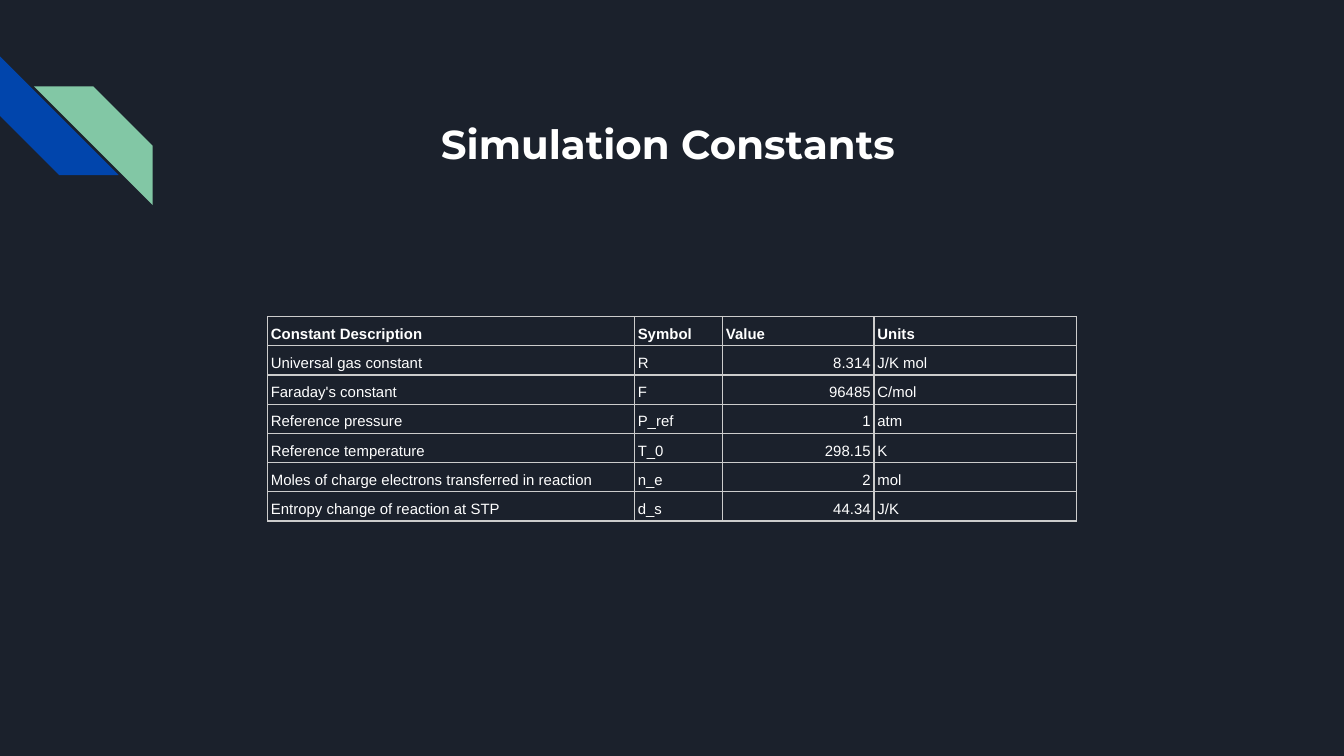
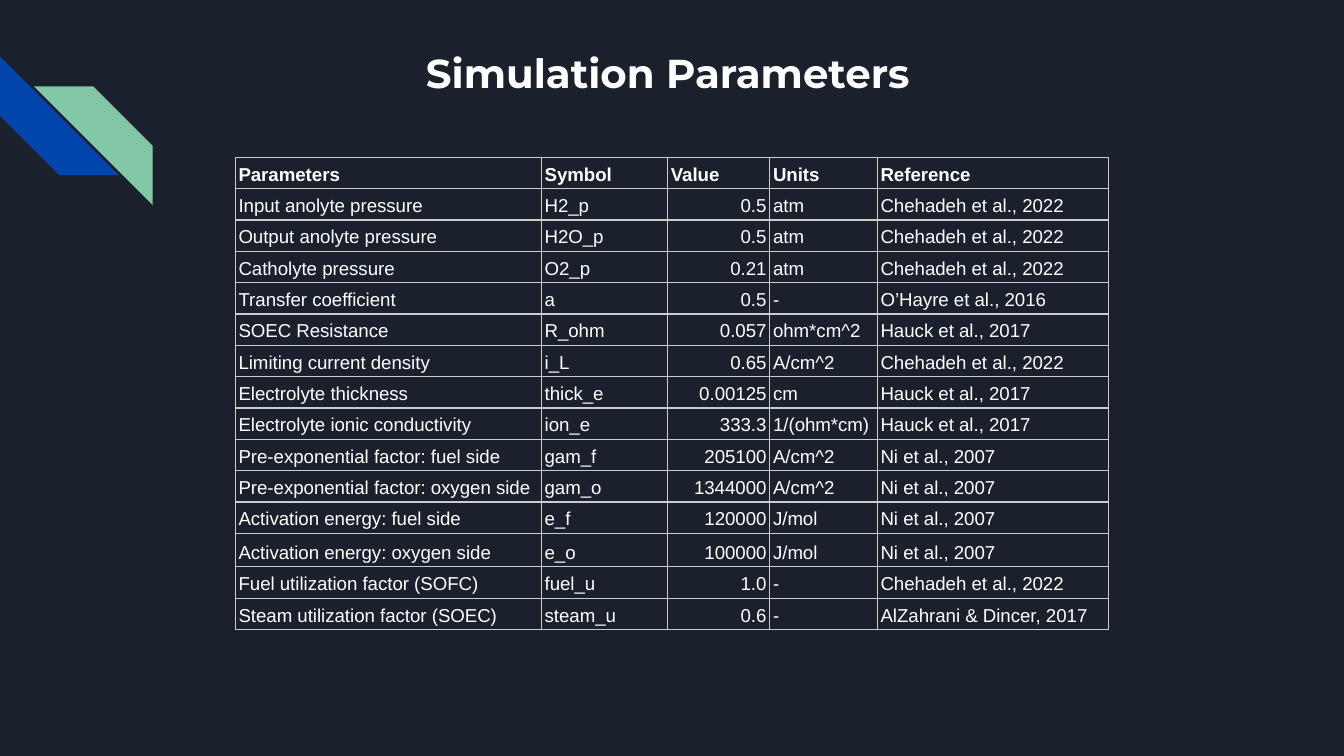
from lxml.etree import SubElement
from pptx import Presentation
from pptx.dml.color import RGBColor
from pptx.enum.shapes import MSO_SHAPE
from pptx.enum.text import MSO_ANCHOR, MSO_AUTO_SIZE, PP_ALIGN
from pptx.oxml.ns import qn
from pptx.util import Pt

NIGHT = RGBColor(0x1B, 0x21, 0x2C)
BLUE = RGBColor(0x01, 0x45, 0xAC)
GREEN = RGBColor(0x82, 0xC7, 0xA5)
WHITE = RGBColor(0xFF, 0xFF, 0xFF)
GRID = RGBColor(0xCC, 0xCC, 0xCC)

TITLE_ONLY = 5
STRIPE_SIZE = 63.6
TITLE_HEIGHT = 45.4
TITLE_INSET = 7.2
CELL_INSET = 1.8
VALUE_COLUMN = 2

CONSTANTS = [
    ("Constant Description", "Symbol", "Value", "Units"),
    ("Universal gas constant", "R", "8.314", "J/K mol"),
    ("Faraday's constant", "F", "96485", "C/mol"),
    ("Reference pressure", "P_ref", "1", "atm"),
    ("Reference temperature", "T_0", "298.15", "K"),
    ("Moles of charge electrons transferred in reaction", "n_e", "2", "mol"),
    ("Entropy change of reaction at STP", "d_s", "44.34", "J/K"),
]

PARAMETERS = [
    ("Parameters", "Symbol", "Value", "Units", "Reference"),
    ("Input anolyte pressure", "H2_p", "0.5", "atm", "Chehadeh et al., 2022"),
    ("Output anolyte pressure", "H2O_p", "0.5", "atm", "Chehadeh et al., 2022"),
    ("Catholyte pressure", "O2_p", "0.21", "atm", "Chehadeh et al., 2022"),
    ("Transfer coefficient", "a", "0.5", "-", "O’Hayre et al., 2016"),
    ("SOEC Resistance", "R_ohm", "0.057", "ohm*cm^2", "Hauck et al., 2017"),
    ("Limiting current density", "i_L", "0.65", "A/cm^2", "Chehadeh et al., 2022"),
    ("Electrolyte thickness", "thick_e", "0.00125", "cm", "Hauck et al., 2017"),
    ("Electrolyte ionic conductivity", "ion_e", "333.3", "1/(ohm*cm)", "Hauck et al., 2017"),
    ("Pre-exponential factor: fuel side", "gam_f", "205100", "A/cm^2", "Ni et al., 2007"),
    ("Pre-exponential factor: oxygen side", "gam_o", "1344000", "A/cm^2", "Ni et al., 2007"),
    ("Activation energy: fuel side", "e_f", "120000", "J/mol", "Ni et al., 2007"),
    ("Activation energy: oxygen side", "e_o", "100000", "J/mol", "Ni et al., 2007"),
    ("Fuel utilization factor (SOFC)", "fuel_u", "1.0", "-", "Chehadeh et al., 2022"),
    ("Steam utilization factor (SOEC)", "steam_u", "0.6", "-", "AlZahrani & Dincer, 2017"),
]


def write_text(frame, text, *, size, font="Arial", bold=False, align=PP_ALIGN.LEFT, spacing=1.0):
    paragraph = frame.paragraphs[0]
    paragraph.alignment = align
    paragraph.line_spacing = spacing
    run = paragraph.add_run()
    run.text = text
    run.font.name = font
    run.font.size = Pt(size)
    run.font.bold = bold
    run.font.color.rgb = WHITE


def set_insets(target, inset):
    target.margin_left = target.margin_right = Pt(inset)
    target.margin_top = target.margin_bottom = Pt(inset)


def add_stripe(slide, left, top, color, rotation):
    stripe = slide.shapes.add_shape(
        MSO_SHAPE.DIAGONAL_STRIPE, Pt(left), Pt(top), Pt(STRIPE_SIZE), Pt(STRIPE_SIZE))
    stripe.adjustments[0] = 0.5
    stripe.rotation = rotation
    stripe.shadow.inherit = False
    stripe.fill.solid()
    stripe.fill.fore_color.rgb = color
    stripe.line.fill.background()


def add_titled_slide(deck, text, left, top, width):
    slide = deck.slides.add_slide(deck.slide_layouts[TITLE_ONLY])
    title = slide.shapes.title
    title.left, title.top = Pt(left), Pt(top)
    title.width, title.height = Pt(width), Pt(TITLE_HEIGHT)
    frame = title.text_frame
    frame.word_wrap = True
    frame.auto_size = MSO_AUTO_SIZE.NONE
    frame.vertical_anchor = MSO_ANCHOR.TOP
    set_insets(frame, TITLE_INSET)
    write_text(frame, text, size=21.6, font="Montserrat", bold=True)
    add_stripe(slide, 0, 30.2, BLUE, 270)
    add_stripe(slide, 18.2, 46.3, GREEN, 90)
    return slide


def draw_borders(cell):
    properties = cell._tc.get_or_add_tcPr()
    for position, side in enumerate(("lnL", "lnR", "lnT", "lnB")):
        border = SubElement(properties, qn(f"a:{side}"), w=str(Pt(0.75)))
        fill = SubElement(border, qn("a:solidFill"))
        SubElement(fill, qn("a:srgbClr"), val=str(GRID))
        properties.insert(position, border)


def add_data_table(slide, entries, left, top, widths, heights, size):
    frame = slide.shapes.add_table(
        len(entries), len(widths), Pt(left), Pt(top), Pt(sum(widths)), Pt(sum(heights)))
    table = frame.table
    table.first_row = table.horz_banding = False
    for column, width in zip(table.columns, widths):
        column.width = Pt(width)
    for row, height in zip(table.rows, heights):
        row.height = Pt(height)
    for row_index, entry in enumerate(entries):
        heading = row_index == 0
        for column_index, text in enumerate(entry):
            cell = table.cell(row_index, column_index)
            cell.fill.background()
            cell.vertical_anchor = MSO_ANCHOR.BOTTOM
            set_insets(cell, CELL_INSET)
            draw_borders(cell)
            numeric = column_index == VALUE_COLUMN and not heading
            write_text(cell.text_frame, text, size=size, bold=heading, spacing=1.15,
                       align=PP_ALIGN.RIGHT if numeric else PP_ALIGN.LEFT)


def main():
    deck = Presentation()
    deck.slide_width, deck.slide_height = Pt(720), Pt(405)
    backdrop = deck.slide_master.background.fill
    backdrop.solid()
    backdrop.fore_color.rgb = NIGHT

    constants = add_titled_slide(deck, "Simulation Constants", 229, 56.9, 262.8)
    add_data_table(constants, CONSTANTS, 143.3, 169.6, (196.6, 47.2, 81.2, 108.4),
                   [15.65] * len(CONSTANTS), 8)

    parameters = add_titled_slide(deck, "Simulation Parameters", 221, 18.7, 277.9)
    heights = [18 if entry[1] == "e_o" else 16.8 for entry in PARAMETERS]
    add_data_table(parameters, PARAMETERS, 126, 84.3, (164, 67.6, 54.8, 57.6, 123.8),
                   heights, 10)

    deck.save("out.pptx")


if __name__ == "__main__":
    main()
